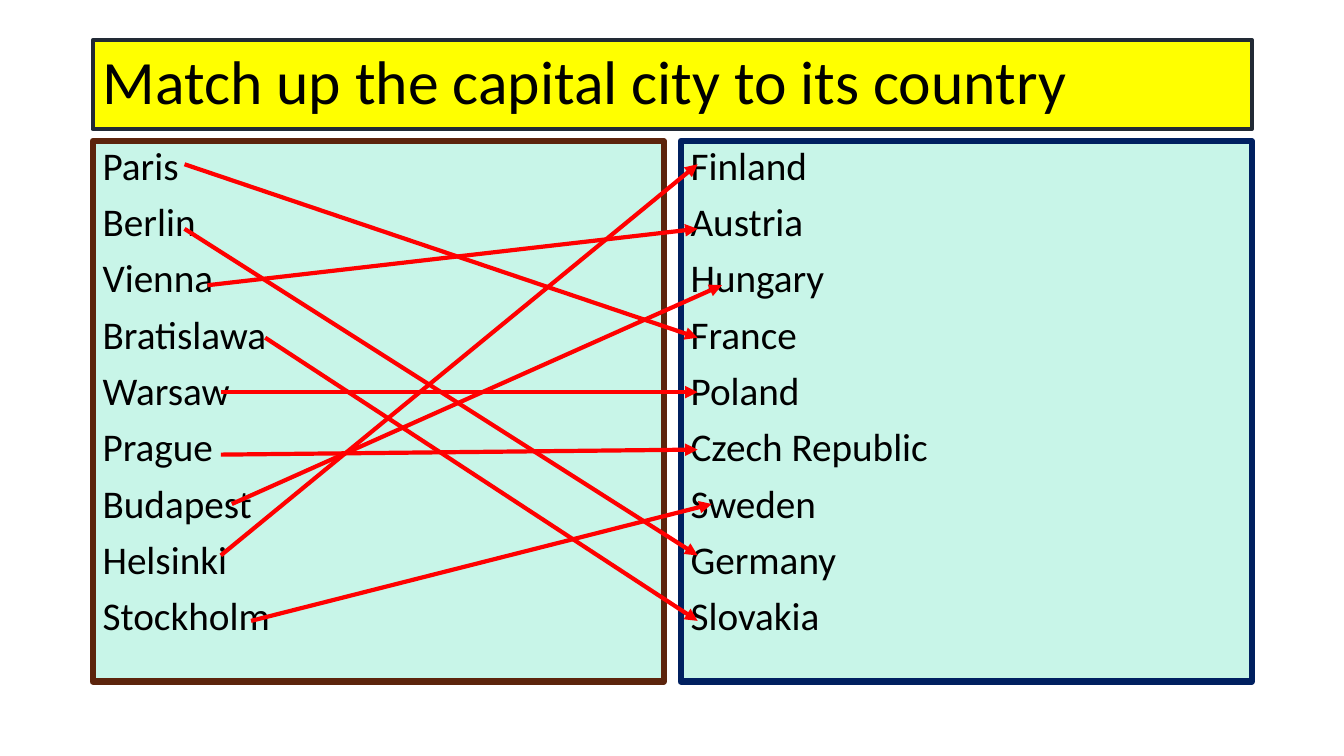
"""Build a slide that matches capital cities to their countries."""
from dataclasses import dataclass

from lxml.etree import SubElement
from pptx import Presentation
from pptx.dml.color import RGBColor
from pptx.enum.shapes import MSO_CONNECTOR
from pptx.enum.text import MSO_ANCHOR, MSO_AUTO_SIZE, PP_ALIGN
from pptx.oxml.ns import qn
from pptx.shapes.autoshape import Shape
from pptx.slide import Slide
from pptx.util import Inches, Pt

SLIDE_WIDTH, SLIDE_HEIGHT = Inches(13.33), Inches(7.5)
BLACK = RGBColor(0x00, 0x00, 0x00)
YELLOW = RGBColor(0xFF, 0xFF, 0x00)
SLATE = RGBColor(0x22, 0x2A, 0x35)
MINT = RGBColor(0xC8, 0xF5, 0xE8)
BROWN = RGBColor(0x5C, 0x24, 0x0C)
NAVY = RGBColor(0x00, 0x20, 0x60)
RED = RGBColor(0xFF, 0x00, 0x00)

LEFT_COLUMN, RIGHT_COLUMN = 6.9, 50.65
PANEL_WIDTH, FULL_WIDTH = 42.5, 86.25
ROWS = (21.73, 30.27, 37.73, 44.67, 51.87, 59.47, 66.67, 73.47, 82.13)
COUNTRIES = ("Finland", "Austria", "Hungary", "France", "Poland",
             "Czech Republic", "Sweden", "Germany", "Slovakia")


@dataclass(frozen=True)
class Frame:
    """Position, size and colours of a bordered box, in percent of the slide."""
    left: float
    top: float
    width: float
    height: float
    fill: RGBColor
    border: RGBColor
    border_width: float


@dataclass(frozen=True)
class Match:
    """A city, its country and the horizontal ends of their arrow."""
    city: str
    country: str
    start: float
    end: float = 51.91
    drop: float = 0


TITLE_FRAME = Frame(LEFT_COLUMN, 5.33, FULL_WIDTH, 11.73, YELLOW, SLATE, 3)
CITY_FRAME = Frame(LEFT_COLUMN, 18.67, PANEL_WIDTH, 71.47, MINT, BROWN, 4.5)
COUNTRY_FRAME = Frame(RIGHT_COLUMN, 18.67, PANEL_WIDTH, 71.47, MINT, NAVY, 4.5)
MATCHES = (
    Match("Paris", "France", 13.73),
    Match("Berlin", "Germany", 13.73),
    Match("Vienna", "Austria", 15.45),
    Match("Bratislawa", "Slovakia", 19.73),
    Match("Warsaw", "Poland", 16.43),
    Match("Prague", "Czech Republic", 16.43, drop=0.67),
    Match("Budapest", "Hungary", 17.25, end=53.71),
    Match("Helsinki", "Finland", 16.43),
    Match("Stockholm", "Sweden", 18.68, end=52.96),
)


def across(share: float) -> int:
    """Convert a percentage of the slide width to a length."""
    return round(SLIDE_WIDTH * share / 100)


def down(share: float) -> int:
    """Convert a percentage of the slide height to a length."""
    return round(SLIDE_HEIGHT * share / 100)


def format_box(box: Shape, frame: Frame, lines: tuple[str, ...], size: float,
               anchor: MSO_ANCHOR) -> None:
    """Place a box, colour it and fill it with one paragraph per line."""
    box.left, box.top = across(frame.left), down(frame.top)
    box.width, box.height = across(frame.width), down(frame.height)
    box.fill.solid()
    box.fill.fore_color.rgb = frame.fill
    box.line.color.rgb = frame.border
    box.line.width = Pt(frame.border_width)
    text = box.text_frame
    text.word_wrap = True
    text.auto_size = MSO_AUTO_SIZE.NONE
    text.vertical_anchor = anchor
    text.text = "\n".join(lines)
    for index, paragraph in enumerate(text.paragraphs):
        paragraph.alignment = PP_ALIGN.LEFT
        paragraph.line_spacing = 0.9
        paragraph.space_before = Pt(10 if index else 0)
        paragraph.font.name = "Calibri"
        paragraph.font.size = Pt(size)
        paragraph.font.color.rgb = BLACK


def add_panel(page: Slide, frame: Frame, names: tuple[str, ...]) -> None:
    """Add a bordered list of names."""
    box = page.shapes.add_textbox(0, 0, 0, 0)
    format_box(box, frame, names, 28, MSO_ANCHOR.TOP)


def add_arrow(page: Slide, row: int, match: Match) -> None:
    """Draw the arrow from a city to its country."""
    target = ROWS[COUNTRIES.index(match.country)]
    arrow = page.shapes.add_connector(
        MSO_CONNECTOR.STRAIGHT, across(match.start), down(ROWS[row] + match.drop),
        across(match.end), down(target))
    arrow.line.color.rgb = RED
    arrow.line.width = Pt(3)
    SubElement(arrow.line._get_or_add_ln(), qn("a:tailEnd"), type="triangle")
    SubElement(arrow._element.spPr, qn("a:effectLst"))


def main() -> None:
    """Build and save the deck."""
    deck = Presentation()
    deck.slide_width, deck.slide_height = SLIDE_WIDTH, SLIDE_HEIGHT
    page = deck.slides.add_slide(deck.slide_layouts.get_by_name("Title Only"))
    format_box(page.shapes.title, TITLE_FRAME,
               ("Match up the capital city to its country",), 44, MSO_ANCHOR.MIDDLE)
    add_panel(page, CITY_FRAME, tuple(match.city for match in MATCHES))
    add_panel(page, COUNTRY_FRAME, COUNTRIES)
    for row, match in enumerate(MATCHES):
        add_arrow(page, row, match)
    deck.save("out.pptx")


if __name__ == "__main__":
    main()
